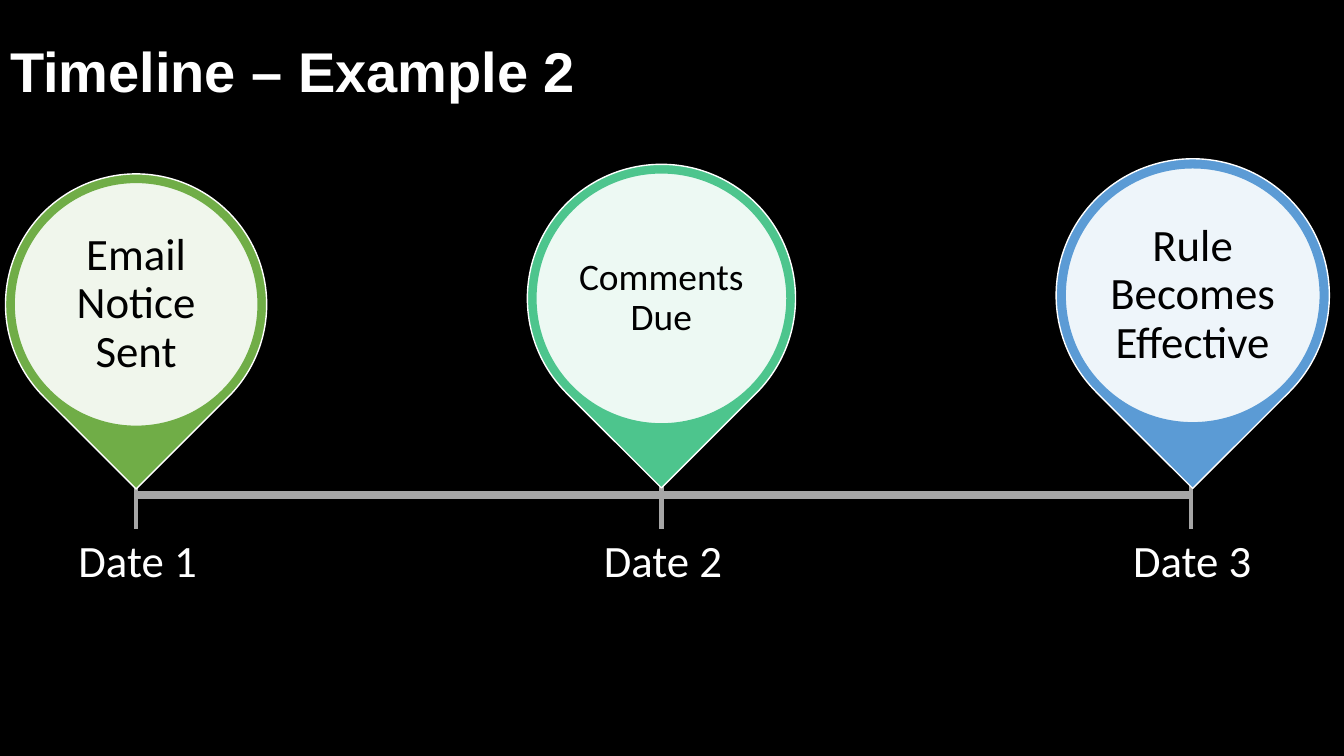
from dataclasses import dataclass

from lxml.etree import SubElement
from pptx import Presentation
from pptx.dml.color import RGBColor
from pptx.enum.shapes import MSO_CONNECTOR as Connector, MSO_SHAPE as Shape
from pptx.enum.text import MSO_ANCHOR as Anchor, PP_ALIGN as Align
from pptx.oxml.ns import qn
from pptx.util import Inches, Pt


@dataclass(frozen=True)
class Theme:
    background: str = "000000"
    light: str = "FFFFFF"
    dark: str = "000000"
    rule: str = "A6A6A6"
    heading_font: str = "Arial"
    body_font: str = "Calibri"
    title_size: float = 40
    text_size: float = 32
    small_size: float = 26.7


@dataclass(frozen=True)
class Milestone:
    text: str
    date: str
    color: str
    tick_x: float
    pin_x: float
    pin_y: float
    drop_size: float
    disc_size: float
    text_size: float


THEME = Theme()
BAR_Y = 4.91
TICK_TOP, TICK_BOTTOM = 4.7, 5.25
MILESTONES = [
    Milestone("Email Notice Sent", "Date 1", "70AD47", 1.35, 1.35, 3.02, 2.59, 2.42, THEME.text_size),
    Milestone("Comments Due", "Date 2", "4DC58D", 6.56, 6.56, 2.96, 2.66, 2.49, THEME.small_size),
    Milestone("Rule Becomes Effective", "Date 3", "5B9BD5", 11.81, 11.83, 2.93, 2.71, 2.53, THEME.text_size),
]


def rgb(color):
    return RGBColor.from_string(color)


def style_text(para, font_name, size, color, bold=False):
    for span in para.runs:
        span.font.name = font_name
        span.font.size = Pt(size)
        span.font.bold = bold
        span.font.color.rgb = rgb(color)


def add_title(page, text):
    title = page.shapes.title
    title.left, title.top = Inches(0), Inches(0.01)
    title.width, title.height = Inches(13.33), Inches(1.45)
    frame = title.text_frame
    frame.text = text
    frame.vertical_anchor = Anchor.MIDDLE
    para = frame.paragraphs[0]
    para.alignment = Align.LEFT
    para.line_spacing = 0.9
    style_text(para, THEME.heading_font, THEME.title_size, THEME.light, bold=True)


def add_rule(page, x1, y1, x2, y2, width):
    rule = page.shapes.add_connector(
        Connector.STRAIGHT, Inches(x1), Inches(y1), Inches(x2), Inches(y2))
    rule.line.color.rgb = rgb(THEME.rule)
    rule.line.width = Pt(width)
    SubElement(rule._element.spPr, qn("a:effectLst"))


def add_date(page, milestone):
    box = page.shapes.add_textbox(
        Inches(milestone.tick_x - 0.67), Inches(5.24), Inches(1.44), Inches(0.64))
    frame = box.text_frame
    frame.word_wrap = True
    frame.text = milestone.date
    style_text(frame.paragraphs[0], THEME.body_font, THEME.text_size, THEME.light)


def add_round(page, kind, milestone, size, fill, line):
    """Add a shape of equal width and height, centred on the milestone's pin."""
    shape = page.shapes.add_shape(
        kind, Inches(milestone.pin_x - size / 2), Inches(milestone.pin_y - size / 2),
        Inches(size), Inches(size))
    shape.shadow.inherit = False
    shape.fill.solid()
    shape.fill.fore_color.rgb = rgb(fill)
    shape.line.color.rgb = rgb(line)
    shape.line.width = Pt(1)
    return shape


def add_pin(page, milestone):
    drop = add_round(page, Shape.TEAR, milestone, milestone.drop_size,
                     milestone.color, THEME.light)
    drop.rotation = 135

    disc = add_round(page, Shape.OVAL, milestone, milestone.disc_size,
                     THEME.light, milestone.color)
    fill_color = disc._element.spPr.find(qn("a:solidFill"))[0]
    SubElement(fill_color, qn("a:alpha"), val="90000")
    frame = disc.text_frame
    frame.word_wrap = True
    frame.vertical_anchor = Anchor.MIDDLE
    frame.margin_left = frame.margin_right = Inches(0.06)
    frame.margin_top = frame.margin_bottom = Inches(0.06)
    frame.text = milestone.text
    para = frame.paragraphs[0]
    para.alignment = Align.CENTER
    para.line_spacing = 0.9
    style_text(para, THEME.body_font, milestone.text_size, THEME.dark)


def main():
    deck = Presentation()
    deck.slide_width, deck.slide_height = Inches(13.33), Inches(7.5)
    page = deck.slides.add_slide(deck.slide_layouts[5])
    page.background.fill.solid()
    page.background.fill.fore_color.rgb = rgb(THEME.background)

    add_title(page, "Timeline – Example 2")
    add_rule(page, MILESTONES[0].tick_x, BAR_Y, MILESTONES[-1].pin_x, BAR_Y, 6)
    for milestone in MILESTONES:
        add_rule(page, milestone.tick_x, TICK_TOP, milestone.tick_x, TICK_BOTTOM, 3)
        add_date(page, milestone)
        add_pin(page, milestone)
    deck.save("out.pptx")


if __name__ == "__main__":
    main()
